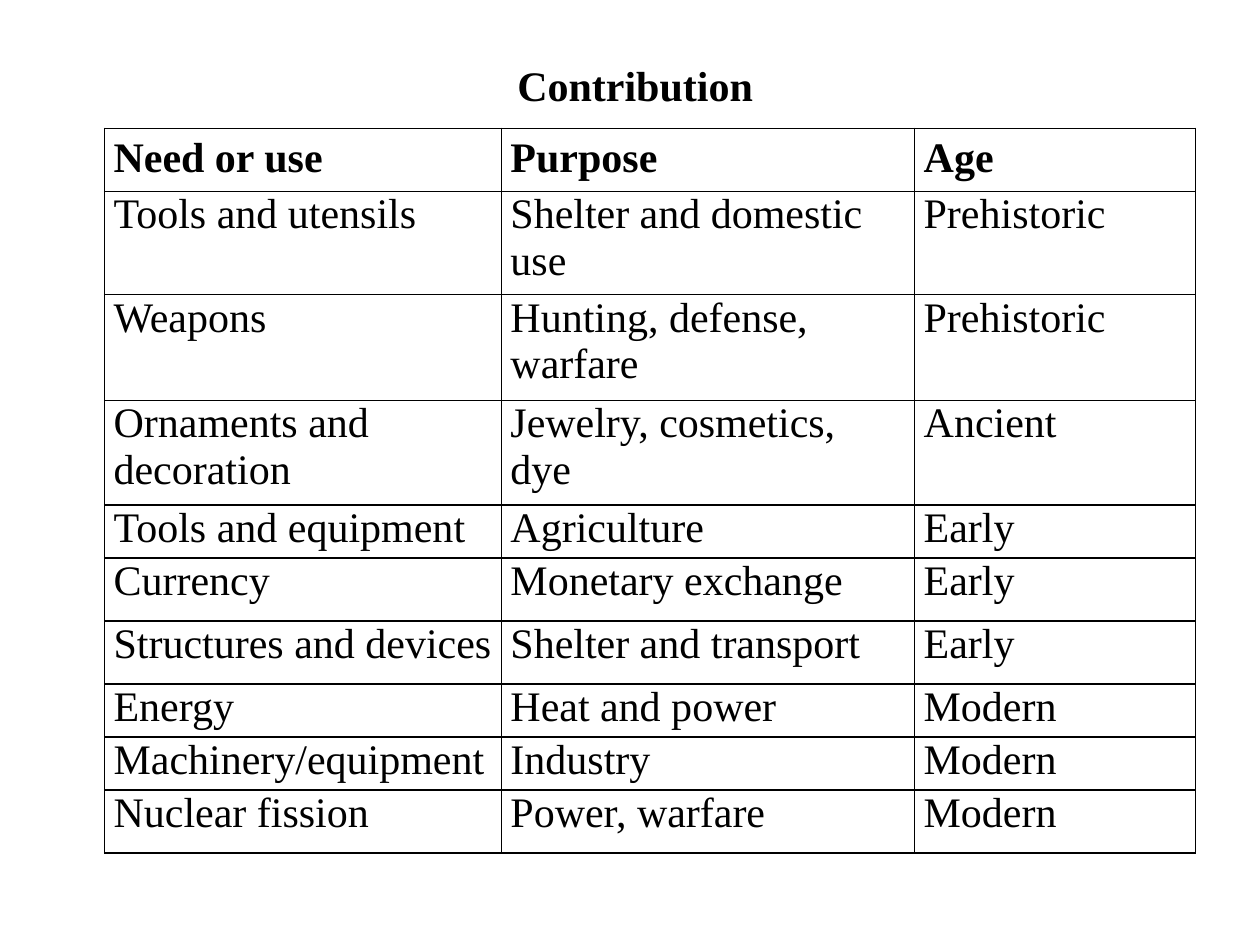
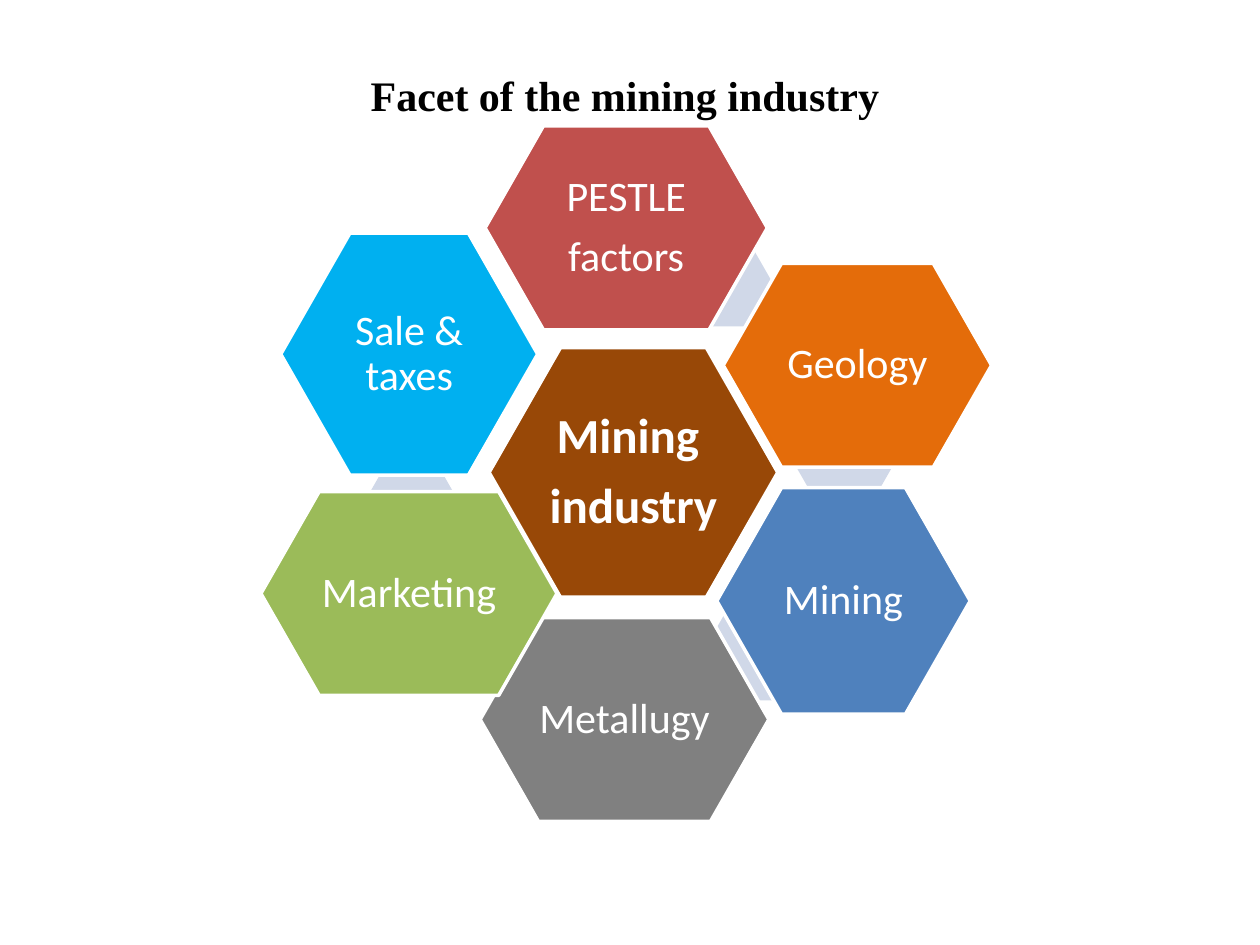
from dataclasses import dataclass
from typing import Optional

from lxml.etree import SubElement
from pptx import Presentation
from pptx.dml.color import RGBColor
from pptx.enum.shapes import MSO_SHAPE
from pptx.enum.text import MSO_ANCHOR, PP_ALIGN
from pptx.oxml.ns import qn
from pptx.shapes.autoshape import Shape
from pptx.slide import Slide
from pptx.table import _Cell
from pptx.text.text import _Paragraph
from pptx.util import Cm, Pt

BLACK = RGBColor(0x00, 0x00, 0x00)
WHITE = RGBColor(0xFF, 0xFF, 0xFF)
BROWN = RGBColor(0x98, 0x48, 0x07)
RED = RGBColor(0xC0, 0x50, 0x4D)
ORANGE = RGBColor(0xE4, 0x6C, 0x0A)
BLUE = RGBColor(0x4F, 0x81, 0xBD)
GREY = RGBColor(0x80, 0x80, 0x80)
GREEN = RGBColor(0x9B, 0xBB, 0x59)
SKY = RGBColor(0x00, 0xB0, 0xF0)
PALE_BLUE = RGBColor(0xD0, 0xD8, 0xE8)

SERIF = "Times New Roman"
SANS = "Calibri"
TEXT_SIZE = 24
LINK_WIDTH, LINK_HEIGHT = 2.18, 1.88
HEXAGON_SLANT = 0.286


@dataclass(frozen=True)
class Box:
    """A rectangle in centimetres."""
    left: float
    top: float
    width: float
    height: float

    def lengths(self) -> tuple[Cm, Cm, Cm, Cm]:
        return Cm(self.left), Cm(self.top), Cm(self.width), Cm(self.height)


@dataclass(frozen=True)
class Facet:
    """A labelled hexagon, with the corner of the link that lies behind it."""
    label: str
    box: Box
    color: RGBColor
    link: Optional[tuple[float, float]] = None
    size: int = TEXT_SIZE
    bold: bool = False


COLUMN_WIDTHS = (8.0, 8.33, 5.66)
ROW_HEIGHTS = (1.27, 2.08, 2.13, 2.11, 1.07, 1.27, 1.27, 1.07, 1.07, 1.27)
CONTRIBUTIONS = (
    ("Need or use", "Purpose", "Age"),
    ("Tools and utensils", "Shelter and domestic use", "Prehistoric"),
    ("Weapons", "Hunting, defense, warfare", "Prehistoric"),
    ("Ornaments and decoration", "Jewelry, cosmetics, dye", "Ancient"),
    ("Tools and equipment", "Agriculture", "Early"),
    ("Currency", "Monetary exchange", "Early"),
    ("Structures and devices", "Shelter and transport", "Early"),
    ("Energy", "Heat and power", "Modern"),
    ("Machinery/equipment", "Industry", "Modern"),
    ("Nuclear fission", "Power, warfare", "Modern"),
)

FACETS = (
    Facet("Mining \nindustry", Box(9.86, 7.01, 5.82, 5.03), BROWN, size=28, bold=True),
    Facet("PESTLE\nfactors", Box(9.78, 2.54, 5.69, 4.11), RED, (13.36, 4.7)),
    Facet("Geology", Box(14.58, 5.31, 5.41, 4.11), ORANGE, (15.93, 8.26)),
    Facet("Mining", Box(14.45, 9.83, 5.11, 4.57), BLUE, (14.15, 12.24)),
    Facet("Metallugy", Box(9.68, 12.45, 5.82, 4.11), GREY, (9.73, 12.65)),
    Facet("Marketing", Box(5.26, 9.91, 5.97, 4.11), GREEN, (7.21, 9.42)),
    Facet("Sale & taxes", Box(5.66, 4.7, 5.18, 4.88), SKY),
)


def format_runs(paragraph: _Paragraph, font_name: str, color: RGBColor,
                size: int = TEXT_SIZE, bold: bool = False) -> None:
    for run in paragraph.runs:
        run.font.name = font_name
        run.font.size = Pt(size)
        run.font.bold = bold
        run.font.color.rgb = color


def add_title(slide: Slide, text: str, box: Box) -> None:
    text_frame = slide.shapes.add_textbox(*box.lengths()).text_frame
    text_frame.word_wrap = True
    text_frame.vertical_anchor = MSO_ANCHOR.MIDDLE
    text_frame.text = text
    paragraph = text_frame.paragraphs[0]
    paragraph.alignment = PP_ALIGN.CENTER
    format_runs(paragraph, SERIF, BLACK, bold=True)


def add_borders(cell: _Cell) -> None:
    """Give the cell a thin black line on all sides; call before setting its fill."""
    properties = cell._tc.get_or_add_tcPr()
    for side in ("a:lnL", "a:lnR", "a:lnT", "a:lnB"):
        line = SubElement(properties, qn(side), w=str(Pt(1)))
        fill = SubElement(line, qn("a:solidFill"))
        SubElement(fill, qn("a:srgbClr"), val=str(BLACK))


def fill_cell(cell: _Cell, text: str, is_header: bool) -> None:
    cell.margin_left = cell.margin_right = Cm(0.18)
    cell.margin_top = cell.margin_bottom = Cm(0)
    add_borders(cell)
    cell.fill.background()
    cell.text_frame.text = text
    paragraph = cell.text_frame.paragraphs[0]
    paragraph.line_spacing = 1.15 if is_header else 1.0
    format_runs(paragraph, SERIF, BLACK, bold=is_header)


def add_contribution_table(slide: Slide) -> None:
    box = Box(2.11, 2.59, sum(COLUMN_WIDTHS), sum(ROW_HEIGHTS))
    table = slide.shapes.add_table(
        len(ROW_HEIGHTS), len(COLUMN_WIDTHS), *box.lengths()).table
    table.first_row = table.horz_banding = False
    for column, width in zip(table.columns, COLUMN_WIDTHS):
        column.width = Cm(width)
    for index, (row, height, texts) in enumerate(
            zip(table.rows, ROW_HEIGHTS, CONTRIBUTIONS)):
        row.height = Cm(height)
        for cell, text in zip(row.cells, texts):
            fill_cell(cell, text, is_header=index == 0)


def add_hexagon(slide: Slide, box: Box, color: RGBColor) -> Shape:
    shape = slide.shapes.add_shape(MSO_SHAPE.HEXAGON, *box.lengths())
    shape.adjustments[0] = HEXAGON_SLANT
    shape.shadow.inherit = False
    shape.fill.solid()
    shape.fill.fore_color.rgb = color
    shape.line.fill.background()
    return shape


def add_facet(slide: Slide, facet: Facet) -> None:
    if facet.link:
        add_hexagon(slide, Box(*facet.link, LINK_WIDTH, LINK_HEIGHT), PALE_BLUE)
    shape = add_hexagon(slide, facet.box, facet.color)
    shape.line.color.rgb = WHITE
    shape.line.width = Pt(2)
    text_frame = shape.text_frame
    text_frame.word_wrap = True
    text_frame.vertical_anchor = MSO_ANCHOR.MIDDLE
    text_frame.margin_left = text_frame.margin_right = Cm(0.08)
    text_frame.margin_top = text_frame.margin_bottom = Cm(0.08)
    text_frame.text = facet.label
    for paragraph in text_frame.paragraphs:
        paragraph.alignment = PP_ALIGN.CENTER
        paragraph.line_spacing = 0.9
        paragraph.space_after = Pt(0.35 * facet.size)
        format_runs(paragraph, SANS, WHITE, facet.size, facet.bold)


def main() -> None:
    presentation = Presentation()
    presentation.slide_width = Cm(25.4)
    presentation.slide_height = Cm(19.05)
    blank_layout = presentation.slide_layouts[6]

    contribution_slide = presentation.slides.add_slide(blank_layout)
    add_title(contribution_slide, "Contribution", Box(4.45, 1.07, 16.71, 1.27))
    add_contribution_table(contribution_slide)

    facet_slide = presentation.slides.add_slide(blank_layout)
    add_title(facet_slide, "Facet of the mining industry", Box(3.61, 1.27, 17.98, 1.27))
    for facet in FACETS:
        add_facet(facet_slide, facet)

    presentation.save("out.pptx")


if __name__ == "__main__":
    main()
